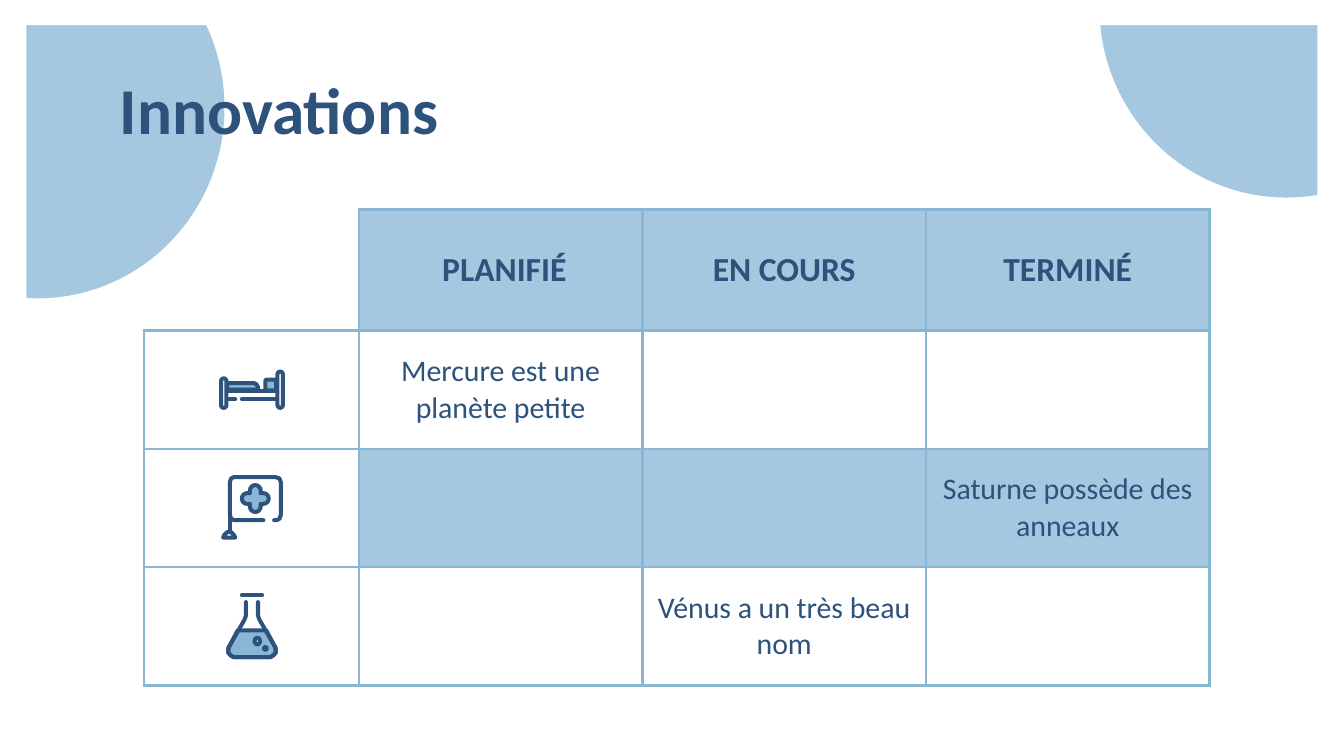
"""Build the Innovations slide: a status table with three medical icons."""
import math

from lxml import etree
from pptx import Presentation
from pptx.dml.color import RGBColor
from pptx.enum.shapes import MSO_CONNECTOR, MSO_SHAPE
from pptx.enum.text import MSO_ANCHOR, MSO_AUTO_SIZE, PP_ALIGN
from pptx.oxml.ns import qn
from pptx.util import Inches, Pt

OVAL, ROUNDED, FRAME = MSO_SHAPE.OVAL, MSO_SHAPE.ROUNDED_RECTANGLE, MSO_SHAPE.FRAME
STRAIGHT = MSO_CONNECTOR.STRAIGHT
MIDDLE, LEFT, CENTER = MSO_ANCHOR.MIDDLE, PP_ALIGN.LEFT, PP_ALIGN.CENTER

COLORS = {"navy": "2D527C", "sky": "8AB6D6", "white": "FFFFFF"}
FONT = "Calibri"
WIDTH = 10
HEIGHT = WIDTH * 9 / 16
MARGIN = 0.1
STROKE = 0.03
ALPHA = 76

TITLE = "Innovations"
ROWS = [
    ["", " PLANIFIÉ", "EN COURS", "TERMINÉ"],
    ["", "Mercure est une planète petite", "", ""],
    ["", "", "", "Saturne possède des anneaux"],
    ["", "", "Vénus a un très beau nom", ""],
]
COLUMN_WIDTHS = [1.6, 2.11, 2.11, 2.11]
ROW_HEIGHTS = [0.9, 0.88, 0.88, 0.88]
TABLE_LEFT, TABLE_TOP = 1.07, 1.56
SHADED_ROWS = (0, 2)
DISC_SIZE = (2.78, 2.84)
DISC_CORNERS = [(-1.11, -0.62), (8.18, -1.37)]


def lobed_cross(x, y, offset=0.06, radius=0.04, steps=8):
    points = []
    for quarter in range(4):
        turn = quarter * math.pi / 2
        cosine, sine = math.cos(turn), math.sin(turn)
        for step in range(steps + 1):
            angle = turn - math.pi / 2 + step * math.pi / steps
            points.append((x + offset * cosine + radius * math.cos(angle),
                           y + offset * sine + radius * math.sin(angle)))
        points.append((x + radius * (cosine - sine), y + radius * (cosine + sine)))
    return points


BOARD = [(2.04, 3.87), (2.06, 3.87), (2.08, 3.86), (2.09, 3.83), (2.09, 3.59), (2.08, 3.56),
         (2.05, 3.55), (1.74, 3.55), (1.72, 3.56), (1.71, 3.59), (1.71, 3.83), (1.72, 3.86),
         (1.74, 3.87), (1.96, 3.87)]
FOOT = [(1.66, 4), (1.67, 3.98), (1.69, 3.96), (1.72, 3.96), (1.74, 3.98), (1.75, 4)]
BLANKET = [(1.69, 2.85), (1.89, 2.85), (1.91, 2.86), (1.92, 2.88), (1.92, 2.9), (1.69, 2.9)]
FLASK_BASE = [(1.7, 4.82), (1.7, 4.86), (1.72, 4.88), (1.74, 4.89),
              (2.01, 4.89), (2.03, 4.88), (2.05, 4.86), (2.05, 4.82)]
FLASK = ([(1.83, 4.48), (1.83, 4.58), (1.82, 4.61)] + FLASK_BASE
         + [(1.93, 4.61), (1.92, 4.58), (1.92, 4.48)])
LIQUID = [(1.77, 4.69)] + FLASK_BASE + [(1.98, 4.69)]

ICONS = {
    "bed": [
        ("line", (1.69, 2.91, 2.06, 2.91)),
        ("line", (1.69, 2.97, 1.75, 2.97)),
        ("line", (1.8, 2.97, 2.06, 2.97)),
        ("area", BLANKET, "sky"),
        ("box", (1.96, 2.81, 0.11, 0.11), ROUNDED, 0.1, "sky"),
        ("box", (2.05, 2.75, 0.07, 0.3), ROUNDED, 0.5, "white"),
        ("box", (1.63, 2.8, 0.07, 0.25), ROUNDED, 0.5, "white"),
    ],
    "sign": [
        ("path", BOARD),
        ("line", (1.71, 3.59, 1.71, 3.95)),
        ("area", FOOT, "white"),
        ("area", lobed_cross(1.9, 3.71), "sky"),
    ],
    "flask": [
        ("area", LIQUID, "sky"),
        ("path", FLASK),
        ("line", (1.8, 4.43, 1.95, 4.43)),
        ("box", (1.88, 4.73, 0.07, 0.08), OVAL, None, "white"),
        ("box", (1.95, 4.8, 0.05, 0.05), OVAL, None, "navy"),
    ],
}


def rgb(name):
    return RGBColor.from_string(COLORS[name])


def paint(fill, name):
    fill.solid()
    fill.fore_color.rgb = rgb(name)


def make_translucent(properties):
    color = properties.find(qn("a:solidFill")).find(qn("a:srgbClr"))
    etree.SubElement(color, qn("a:alpha"), val=str(ALPHA * 1000))


def add_stroke(shape):
    shape.line.color.rgb = rgb("navy")
    shape.line.width = Inches(STROKE)
    line = shape.element.spPr.find(qn("a:ln"))
    line.set("cap", "rnd")
    etree.SubElement(line, qn("a:round"))


def add_block(shapes, kind, box, color):
    shape = shapes.add_shape(kind, *(Inches(value) for value in box))
    shape.shadow.inherit = False
    shape.line.fill.background()
    paint(shape.fill, color)
    return shape


def draw_line(shapes, ends):
    connector = shapes.add_connector(STRAIGHT, *(Inches(value) for value in ends))
    add_stroke(connector)
    etree.SubElement(connector.element.spPr, qn("a:effectLst"))


def draw_path(shapes, points, color=None):
    corners = [(Inches(x), Inches(y)) for x, y in points]
    builder = shapes.build_freeform(*corners[0])
    builder.add_line_segments(corners[1:], close=color is not None)
    shape = builder.convert_to_shape()
    shape.shadow.inherit = False
    if color:
        paint(shape.fill, color)
    else:
        shape.fill.background()
    add_stroke(shape)


def draw_box(shapes, outer, kind, rounding, color):
    left, top, width, height = outer
    inner = (left + STROKE / 2, top + STROKE / 2, width - STROKE, height - STROKE)
    shape = add_block(shapes, kind, inner, color)
    if rounding is not None:
        shape.adjustments[0] = rounding
    add_stroke(shape)


DRAW = {"line": draw_line, "path": draw_path, "area": draw_path, "box": draw_box}


def style_text(frame, size, bold, alignment):
    paragraph = frame.paragraphs[0]
    paragraph.alignment = alignment
    for run in paragraph.runs:
        run.font.name, run.font.size, run.font.bold = FONT, Pt(size), bold
        run.font.color.rgb = rgb("navy")


def set_margins(target):
    target.margin_left = target.margin_right = Inches(MARGIN)
    target.margin_top = target.margin_bottom = Inches(MARGIN)


def add_borders(properties, hidden):
    for side in ("lnL", "lnR", "lnT", "lnB"):
        line = etree.SubElement(properties, qn(f"a:{side}"), w=str(Pt(1.5)))
        if side in hidden:
            etree.SubElement(line, qn("a:noFill"))
        else:
            fill = etree.SubElement(line, qn("a:solidFill"))
            etree.SubElement(fill, qn("a:srgbClr"), val=COLORS["sky"])


def add_status_table(shapes):
    table = shapes.add_table(
        len(ROWS), len(COLUMN_WIDTHS), Inches(TABLE_LEFT), Inches(TABLE_TOP),
        Inches(sum(COLUMN_WIDTHS)), Inches(sum(ROW_HEIGHTS))).table
    table.first_row = table.horz_banding = False
    for column, width in zip(table.columns, COLUMN_WIDTHS):
        column.width = Inches(width)
    for row, height in zip(table.rows, ROW_HEIGHTS):
        row.height = Inches(height)
    for r, texts in enumerate(ROWS):
        for c, text in enumerate(texts):
            cell = table.cell(r, c)
            cell.text = text
            set_margins(cell)
            cell.vertical_anchor = MIDDLE
            style_text(cell.text_frame, 16 if r else 18, r == 0, CENTER)
            properties = cell._tc.get_or_add_tcPr()
            add_borders(properties, ("lnL", "lnT") if r == c == 0 else ())
            if r in SHADED_ROWS and c:
                paint(cell.fill, "sky")
                make_translucent(properties)
            else:
                cell.fill.background()


def main():
    presentation = Presentation()
    presentation.slide_width, presentation.slide_height = Inches(WIDTH), Inches(HEIGHT)
    slide = presentation.slides.add_slide(presentation.slide_layouts[5])
    shapes = slide.shapes
    for corner in DISC_CORNERS:
        disc = add_block(shapes, OVAL, corner + DISC_SIZE, "sky")
        make_translucent(disc.element.spPr)
    add_block(shapes, FRAME, (0, -0.01, WIDTH, HEIGHT), "white").adjustments[0] = 0.035
    title = shapes.title
    title.left, title.top, title.width, title.height = map(Inches, (0.79, 0.49, 8.43, 0.63))
    frame = title.text_frame
    frame.text = TITLE
    frame.auto_size, frame.vertical_anchor = MSO_AUTO_SIZE.NONE, MIDDLE
    set_margins(frame)
    style_text(frame, 35, True, LEFT)
    title.element.getparent().append(title.element)
    add_status_table(shapes)
    for parts in ICONS.values():
        for kind, *details in parts:
            DRAW[kind](shapes, *details)
    presentation.save("out.pptx")


if __name__ == "__main__":
    main()
